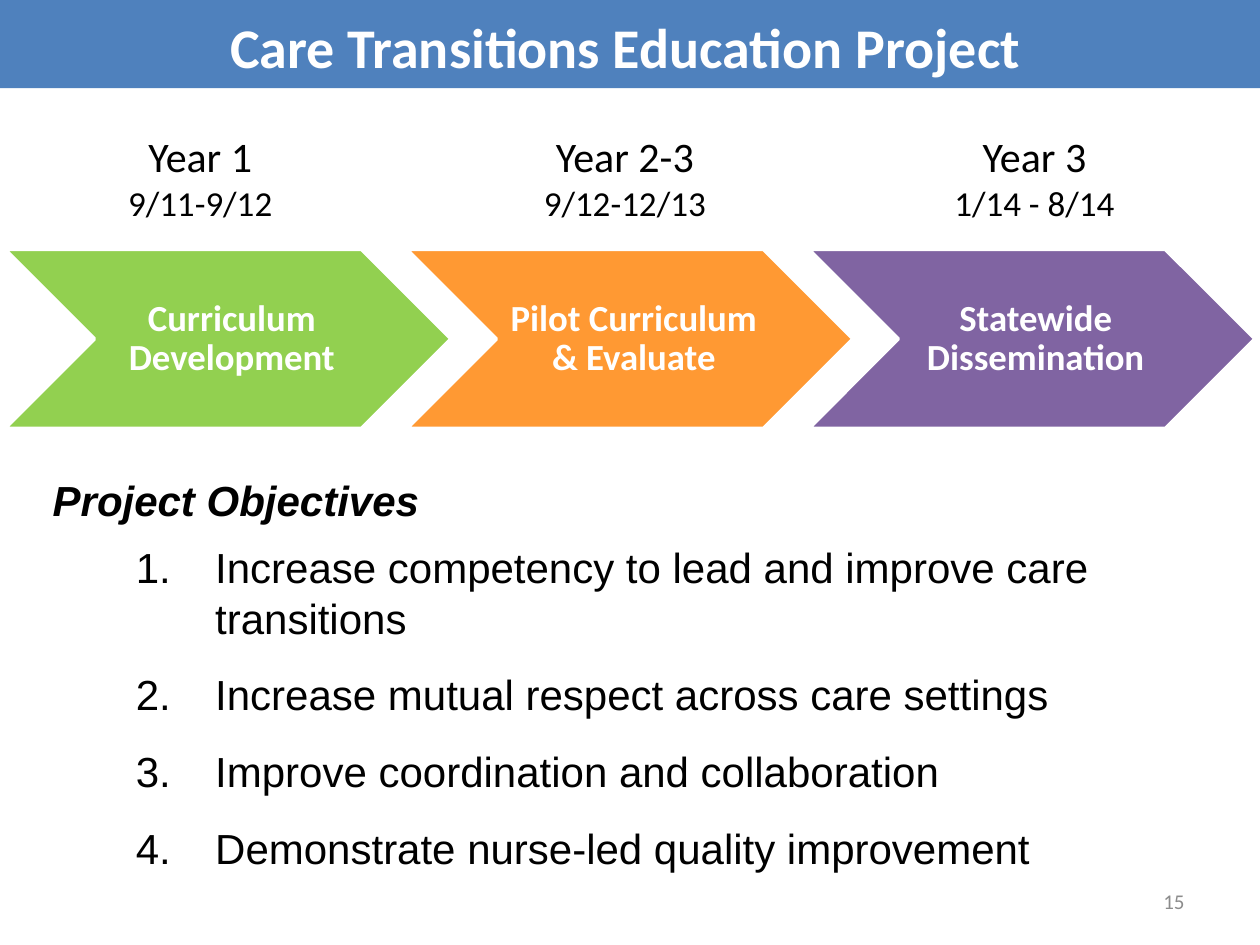
"""Build the Care Transitions Education Project slide."""
from lxml import etree
from pptx import Presentation
from pptx.dml.color import RGBColor
from pptx.enum.shapes import MSO_SHAPE
from pptx.enum.text import MSO_ANCHOR, MSO_AUTO_SIZE, PP_ALIGN
from pptx.oxml.ns import qn
from pptx.util import Inches, Pt

RECT, CHEVRON = MSO_SHAPE.RECTANGLE, MSO_SHAPE.CHEVRON
LEFT, MID, RIGHT = PP_ALIGN.LEFT, PP_ALIGN.CENTER, PP_ALIGN.RIGHT
TOP, CENTRE = MSO_ANCHOR.TOP, MSO_ANCHOR.MIDDLE
FIXED = MSO_AUTO_SIZE.NONE

WIDE, HIGH = 10, 7.5
TITLE = "Care Transitions Education Project"
PHASES = [
    ("Year 1", "9/11-9/12", "Curriculum Development", "92D050", 0.91, 1.36),
    ("Year 2-3", "9/12-12/13", "Pilot Curriculum & Evaluate", "FF9933", 4.21, 1.5),
    ("Year 3", "1/14 - 8/14", "Statewide Dissemination", "8064A2", 7.47, 1.48),
]
HEAD = "Project Objectives"
GOALS = [
    "Increase competency to lead and improve care transitions",
    "Increase mutual respect across care settings",
    "Improve coordination and collaboration",
    "Demonstrate nurse-led quality improvement",
]
PAGE = "15"

START, STEP, ROW = 0.04, 3.19, 1.98
LONG, TALL = 3.54, 1.42
INDENT = 0.63

WHITE = "FFFFFF"
BANNER = {"name": "Calibri", "size": Pt(32), "bold": True, "color": WHITE}
LABEL = {"name": "Calibri", "size": Pt(21), "bold": True, "color": WHITE}
YEAR = {"name": "Calibri", "size": Pt(24), "color": "000000"}
DATES = {**YEAR, "size": Pt(20)}
GOAL = {**YEAR, "name": "Arial"}
LEAD = {**GOAL, "bold": True, "italic": True}
NUMBER = {"name": "Calibri", "size": Pt(12), "color": "8C8C8C"}


def paint(color, code):
    """Set a colour from a hex string."""
    color.rgb = RGBColor.from_string(code)


def write(frame, lines, align=LEFT, anchor=TOP, wrap=True, **gaps):
    """Fill a text frame with (text, format) lines."""
    frame.auto_size = FIXED
    frame.word_wrap, frame.vertical_anchor = wrap, anchor
    for i, (text, style) in enumerate(lines):
        para = frame.add_paragraph() if i else frame.paragraphs[0]
        para.alignment = align
        for key, value in gaps.items():
            setattr(para, key, value)
        run = para.add_run()
        run.text = text
        for key, value in style.items():
            if key == "color":
                paint(run.font.color, value)
            else:
                setattr(run.font, key, value)


def add_text(slide, box, lines, **form):
    """Add a text box and return its frame."""
    frame = slide.shapes.add_textbox(*map(Inches, box)).text_frame
    write(frame, lines, **form)
    return frame


def add_block(slide, kind, box, code):
    """Add a flat filled shape."""
    shape = slide.shapes.add_shape(kind, *map(Inches, box))
    shape.shadow.inherit = False
    shape.fill.solid()
    paint(shape.fill.fore_color, code)
    shape.line.fill.background()
    return shape


def add_title(slide):
    """Place the title on its bar."""
    bar = add_block(slide, RECT, (0, 0, WIDE, 0.7), "4F81BD")
    title = slide.shapes.title
    title._element.addprevious(bar._element)
    spots = zip(("left", "top", "width", "height"), (1.34, 0.05, 7.25, 0.63))
    for key, value in spots:
        setattr(title, key, Inches(value))
    write(title.text_frame, [(TITLE, BANNER)], align=MID)


def add_phase(slide, col, phase):
    """Add one chevron with its label and years."""
    year, dates, label, code, left, width = phase
    x = START + col * STEP
    arrow = add_block(slide, CHEVRON, (x, ROW, LONG, TALL), code)
    paint(arrow.line.color, WHITE)
    arrow.line.width = Pt(2)
    box = (x + TALL / 2, ROW, LONG - TALL, TALL)
    frame = add_text(slide, box, [(label, LABEL)], align=MID,
                     anchor=CENTRE, line_spacing=0.9)
    for side in ("top", "right", "bottom"):
        setattr(frame, f"margin_{side}", Inches(0.03))
    frame.margin_left = Inches(0.09)
    add_text(slide, (left, 0.99, width, 0.84),
             [(year, YEAR), (dates, DATES)], align=MID, wrap=False)


def add_goals(slide):
    """Add the heading and the numbered list."""
    add_text(slide, (0.32, 3.72, 3.14, 0.5), [(HEAD, LEAD)], wrap=False)
    frame = add_text(slide, (0.98, 4.25, 8.07, 2.75),
                     [(goal, GOAL) for goal in GOALS], space_after=Pt(15))
    for para in frame.paragraphs:
        props = para._p.get_or_add_pPr()
        props.set("marL", str(Inches(INDENT)))
        props.set("indent", str(-Inches(INDENT)))
        etree.SubElement(props, qn("a:buFont"), typeface="+mj-lt")
        etree.SubElement(props, qn("a:buAutoNum"), type="arabicPeriod")


def main():
    """Build and save the slide."""
    deck = Presentation()
    deck.slide_width, deck.slide_height = Inches(WIDE), Inches(HIGH)
    slide = deck.slides.add_slide(deck.slide_layouts[5])
    add_title(slide)
    for col, phase in enumerate(PHASES):
        add_phase(slide, col, phase)
    add_goals(slide)
    add_text(slide, (7.17, 6.95, 2.33, 0.4), [(PAGE, NUMBER)],
             align=RIGHT, anchor=CENTRE)
    deck.save("out.pptx")


if __name__ == "__main__":
    main()
